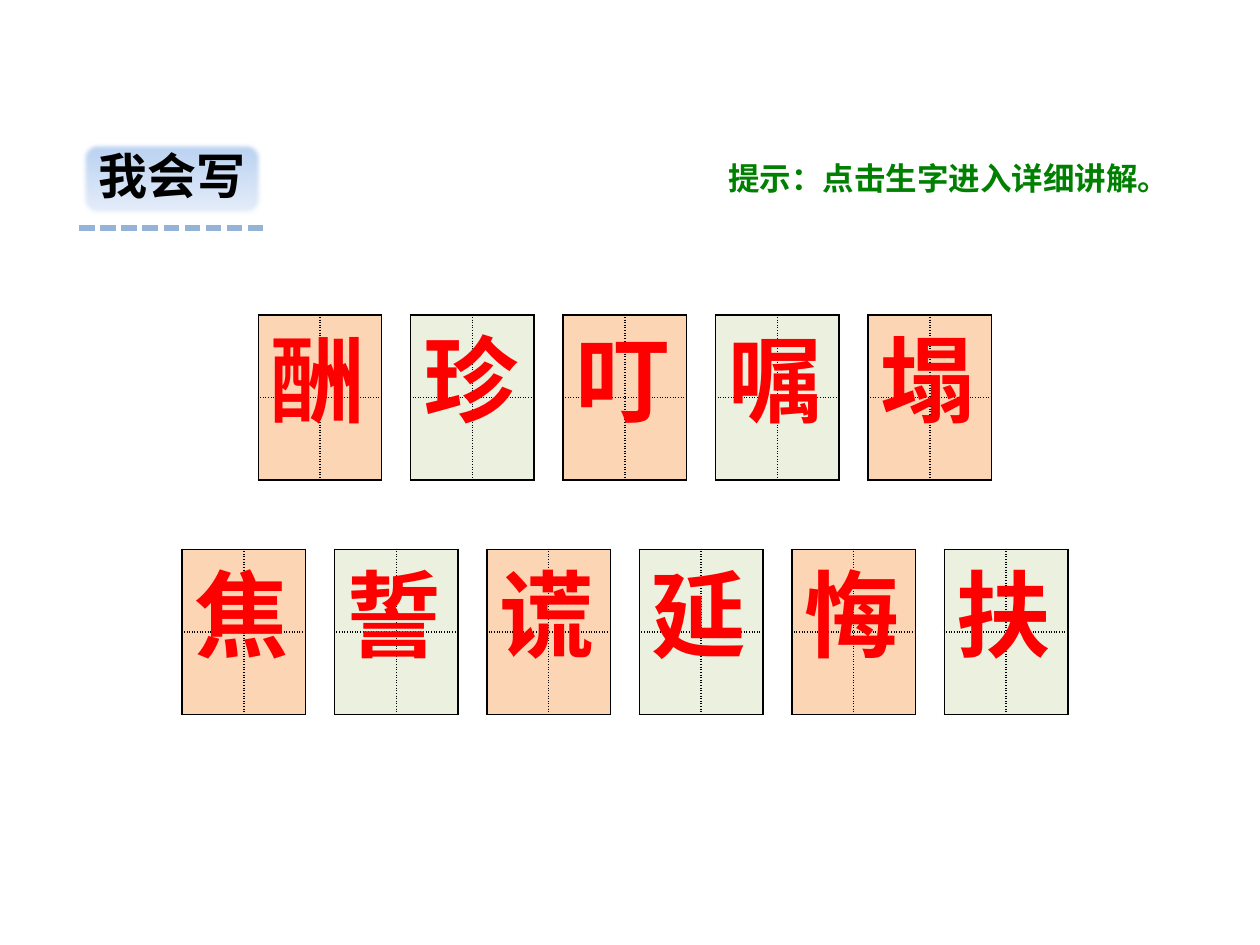
from lxml.etree import SubElement
from pptx import Presentation
from pptx.dml.color import RGBColor
from pptx.enum.dml import MSO_LINE
from pptx.enum.shapes import MSO_CONNECTOR, MSO_SHAPE
from pptx.enum.text import MSO_ANCHOR, MSO_AUTO_SIZE
from pptx.oxml.ns import qn
from pptx.util import Inches, Pt

TITLE = "我会写"
HINT = [("提示", "Noto Sans CJK SC"), ("：", "Calibri"), ("点击生字进入详细讲解。", "Noto Sans CJK SC")]
CARD_ROWS = [("酬珍叮嘱塌", 2.5), ("焦誓谎延悔扶", 4.36)]

CJK_FONT = "Noto Sans CJK SC"
BLACK = RGBColor(0x00, 0x00, 0x00)
WHITE = RGBColor(0xFF, 0xFF, 0xFF)
RED = RGBColor(0xFF, 0x00, 0x00)
GREEN = RGBColor(0x00, 0x80, 0x00)
DASH_BLUE = RGBColor(0x95, 0xB3, 0xD7)
BADGE_TOP = RGBColor(0xB7, 0xD0, 0xF1)
BADGE_BOTTOM = RGBColor(0xE8, 0xEF, 0xFA)
CARD_FILLS = [RGBColor(0xFC, 0xD5, 0xB5), RGBColor(0xEB, 0xF1, 0xDE)]

CARD_WIDTH, CARD_HEIGHT = 0.98, 1.31
CARD_PITCH = 1.21
CARDS_CENTRE = 4.96


def add_solid_line(parent, tag, color, width, dash=None):
    line = SubElement(parent, qn(tag), w=str(Pt(width)))
    fill = SubElement(line, qn("a:solidFill"))
    SubElement(fill, qn("a:srgbClr"), val=str(color))
    if dash:
        SubElement(line, qn("a:prstDash"), val=dash)
    return line


def write_text(shape, text, size, color, font=CJK_FONT, outline=None):
    run = shape.text_frame.paragraphs[0].add_run()
    run.text = text
    run.font.size = Pt(size)
    run.font.bold = True
    properties = run.font._element
    if outline is not None:
        add_solid_line(properties, "a:ln", outline, 0.75)
    run.font.color.rgb = color
    run.font.name = font
    properties.find(qn("a:latin")).addnext(
        properties.makeelement(qn("a:ea"), {"typeface": CJK_FONT}))


def add_badge(slide):
    badge = slide.shapes.add_shape(MSO_SHAPE.ROUNDED_RECTANGLE, Inches(0.65), Inches(1.13),
                                   Inches(1.43), Inches(0.58))
    badge.fill.gradient()
    badge.fill.gradient_angle = 270
    for stop, color, position in zip(badge.fill.gradient_stops, (BADGE_TOP, BADGE_BOTTOM), (0, 1)):
        stop.color.rgb = color
        stop.position = position
    badge.line.fill.background()
    badge.shadow.inherit = False
    effects = badge._element.spPr.find(qn("a:effectLst"))
    SubElement(effects, qn("a:softEdge"), rad=str(Pt(2.5)))
    frame = badge.text_frame
    frame.word_wrap = False
    frame.vertical_anchor = MSO_ANCHOR.TOP
    frame.paragraphs[0].line_spacing = 0.9
    write_text(badge, TITLE, 28, BLACK)

    underline = slide.shapes.add_connector(MSO_CONNECTOR.STRAIGHT, Inches(0.63), Inches(1.81),
                                           Inches(2.09), Inches(1.81))
    underline.line.color.rgb = DASH_BLUE
    underline.line.width = Pt(3)
    underline.line.dash_style = MSO_LINE.SQUARE_DOT
    SubElement(underline._element.spPr, qn("a:effectLst"))


def add_card(slide, character, left, top, color):
    frame = slide.shapes.add_table(2, 2, Inches(left), Inches(top),
                                   Inches(CARD_WIDTH), Inches(CARD_HEIGHT))
    table = frame.table
    table.first_row = table.horz_banding = False
    for row in range(2):
        for column in range(2):
            cell = table.cell(row, column)
            properties = cell._tc.get_or_add_tcPr()
            inner_edges = ("a:lnL" if column else "a:lnR", "a:lnT" if row else "a:lnB")
            for edge in ("a:lnL", "a:lnR", "a:lnT", "a:lnB"):
                add_solid_line(properties, edge, BLACK, 1, "sysDot" if edge in inner_edges else "solid")
            cell.fill.solid()
            cell.fill.fore_color.rgb = color

    box = slide.shapes.add_textbox(Inches(left), Inches(top), Inches(0.96), Inches(1.01))
    box.text_frame.word_wrap = False
    box.text_frame.auto_size = MSO_AUTO_SIZE.SHAPE_TO_FIT_TEXT
    write_text(box, character, 54, RED, outline=WHITE)


def add_hint(slide):
    hint = slide.shapes.add_textbox(Inches(5.71), Inches(1.14), Inches(3.72), Inches(0.54))
    frame = hint.text_frame
    frame.word_wrap = True
    frame.vertical_anchor = MSO_ANCHOR.MIDDLE
    frame.margin_left = frame.margin_right = frame.margin_top = frame.margin_bottom = Inches(0.07)
    for text, font in HINT:
        write_text(hint, text, 18, GREEN, font=font)


def main():
    presentation = Presentation()
    presentation.slide_width, presentation.slide_height = Inches(10), Inches(7.5)
    slide = presentation.slides.add_slide(presentation.slide_layouts[6])
    add_badge(slide)
    for characters, top in CARD_ROWS:
        row_width = (len(characters) - 1) * CARD_PITCH + CARD_WIDTH
        first_left = CARDS_CENTRE - row_width / 2
        for index, character in enumerate(characters):
            add_card(slide, character, first_left + index * CARD_PITCH, top, CARD_FILLS[index % 2])
    add_hint(slide)
    presentation.save("out.pptx")


if __name__ == "__main__":
    main()
